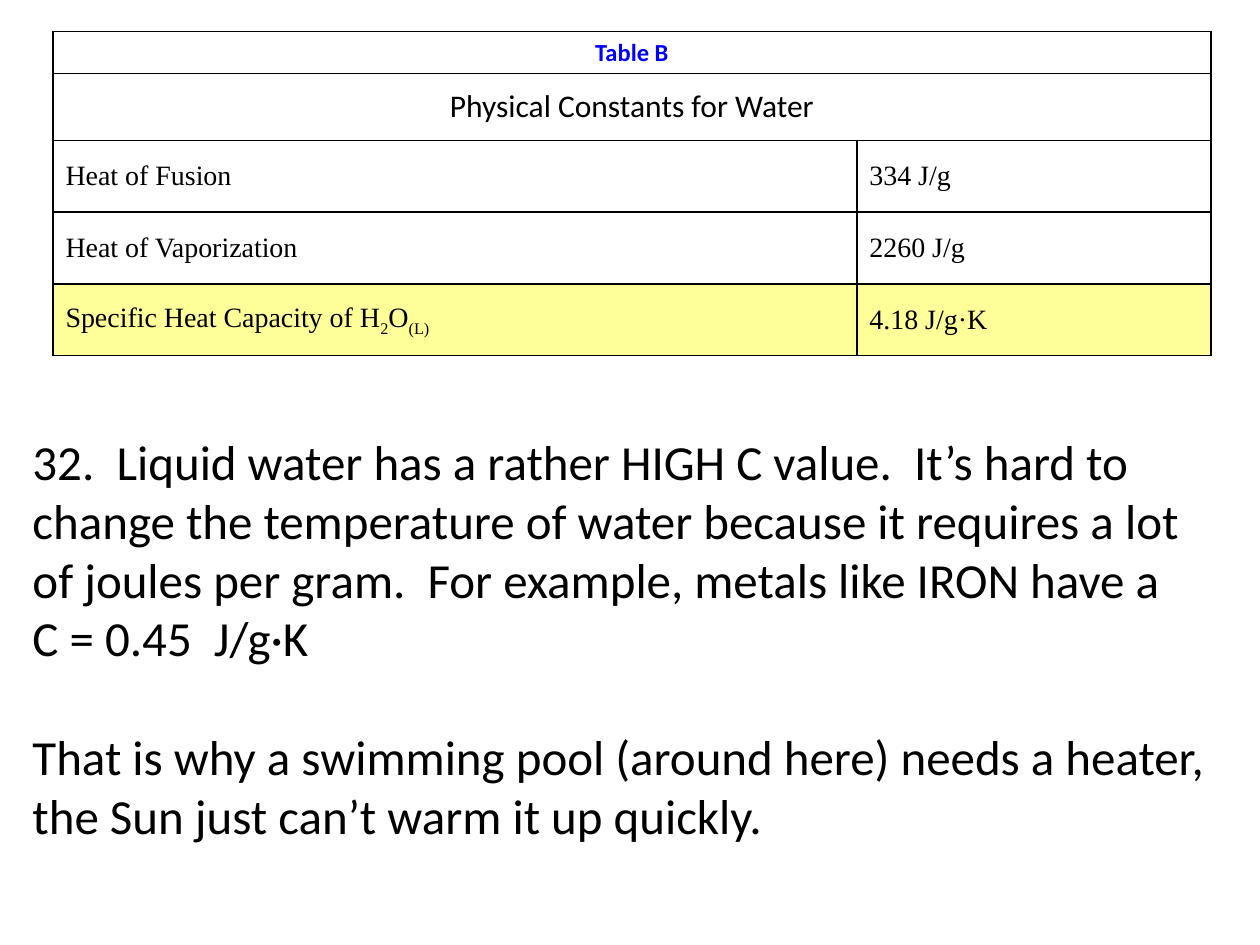
from lxml import etree
from pptx import Presentation
from pptx.dml.color import RGBColor
from pptx.enum.text import MSO_ANCHOR, PP_ALIGN
from pptx.oxml.ns import qn
from pptx.util import Inches, Pt

MIDDLE = MSO_ANCHOR.MIDDLE
LEFT, CENTER = PP_ALIGN.LEFT, PP_ALIGN.CENTER
WIDE, HIGH = Inches(10), Inches(7.5)
BLANK = 6
COLORS = {"ink": "000000", "head": "0000FF", "plain": "FFFFFF", "mark": "FFFF99"}

COLS = [6.38, 2.81]
ROWS = [0.33, 0.53] + [0.57] * 3
HEADS = [
    ("Table B", dict(size=14, color="head", bold=True)),
    ("Physical Constants for Water", dict(size=18)),
]
# Every second part of a label is a subscript.
FACTS = [
    (["Heat of Fusion"], "334 J/g", "plain"),
    (["Heat of Vaporization"], "2260 J/g", "plain"),
    (["Specific Heat Capacity of H", "2", "O", "(L)"], "4.18 J/g·K", "mark"),
]
NOTES = [
    [
        "32.  Liquid water has a rather HIGH C value.  It’s hard to change the "
        "temperature of water because it requires a lot of joules per gram.  "
        "For example, metals like IRON have a ",
        "C = 0.45  J/g·K",
    ],
    [
        "That is why a swimming pool (around here) needs a heater, "
        "the Sun just can’t warm it up quickly."
    ],
]


def rgb(name):
    return RGBColor.from_string(COLORS[name])


def write(para, text, size=16, font="Calibri", color="ink", bold=False,
          align=LEFT, sub=False):
    para.alignment = align
    run = para.add_run()
    run.text = text
    run.font.size = Pt(size)
    run.font.name = font
    run.font.bold = bold
    run.font.color.rgb = rgb(color)
    if sub:
        run.font._element.set("baseline", "-25000")


def frame(cell):
    """Give a cell a thin line on all four sides."""
    props = cell._tc.get_or_add_tcPr()
    for i, side in enumerate(("lnL", "lnR", "lnT", "lnB")):
        line = etree.Element(qn(f"a:{side}"), w=str(Pt(1)))
        fill = etree.SubElement(line, qn("a:solidFill"))
        etree.SubElement(fill, qn("a:srgbClr"), val=COLORS["ink"])
        props.insert(i, line)


def style(cell, fill="plain"):
    cell.fill.solid()
    cell.fill.fore_color.rgb = rgb(fill)
    cell.vertical_anchor = MIDDLE
    frame(cell)


def add_facts(slide):
    table = slide.shapes.add_table(
        len(ROWS), len(COLS), Inches(0.42), Inches(0.25),
        Inches(sum(COLS)), Inches(sum(ROWS))).table
    for col, width in zip(table.columns, COLS):
        col.width = Inches(width)
    for row, height in zip(table.rows, ROWS):
        row.height = Inches(height)

    for r, (text, form) in enumerate(HEADS):
        left, right = table.cell(r, 0), table.cell(r, 1)
        left.merge(right)
        style(left)
        style(right)
        write(left.text_frame.paragraphs[0], text, align=CENTER, **form)

    for r, (label, value, fill) in enumerate(FACTS, len(HEADS)):
        for c, parts in enumerate((label, [value])):
            cell = table.cell(r, c)
            style(cell, fill)
            for i, part in enumerate(parts):
                write(cell.text_frame.paragraphs[0], part,
                      font="Times New Roman", sub=i % 2 == 1)


def add_notes(slide):
    box = slide.shapes.add_textbox(
        Inches(0.16), int(HIGH * 0.45), Inches(9.67), int(HIGH * 0.45))
    body = box.text_frame
    body.word_wrap = True
    for i, lines in enumerate(NOTES):
        para = body.add_paragraph() if i else body.paragraphs[0]
        para.space_before = Pt(34 * i)
        for j, line in enumerate(lines):
            if j:
                para.add_line_break()
            write(para, line, size=28)


def main():
    deck = Presentation()
    deck.slide_width, deck.slide_height = WIDE, HIGH
    slide = deck.slides.add_slide(deck.slide_layouts[BLANK])
    add_notes(slide)
    add_facts(slide)
    deck.save("out.pptx")


if __name__ == "__main__":
    main()
